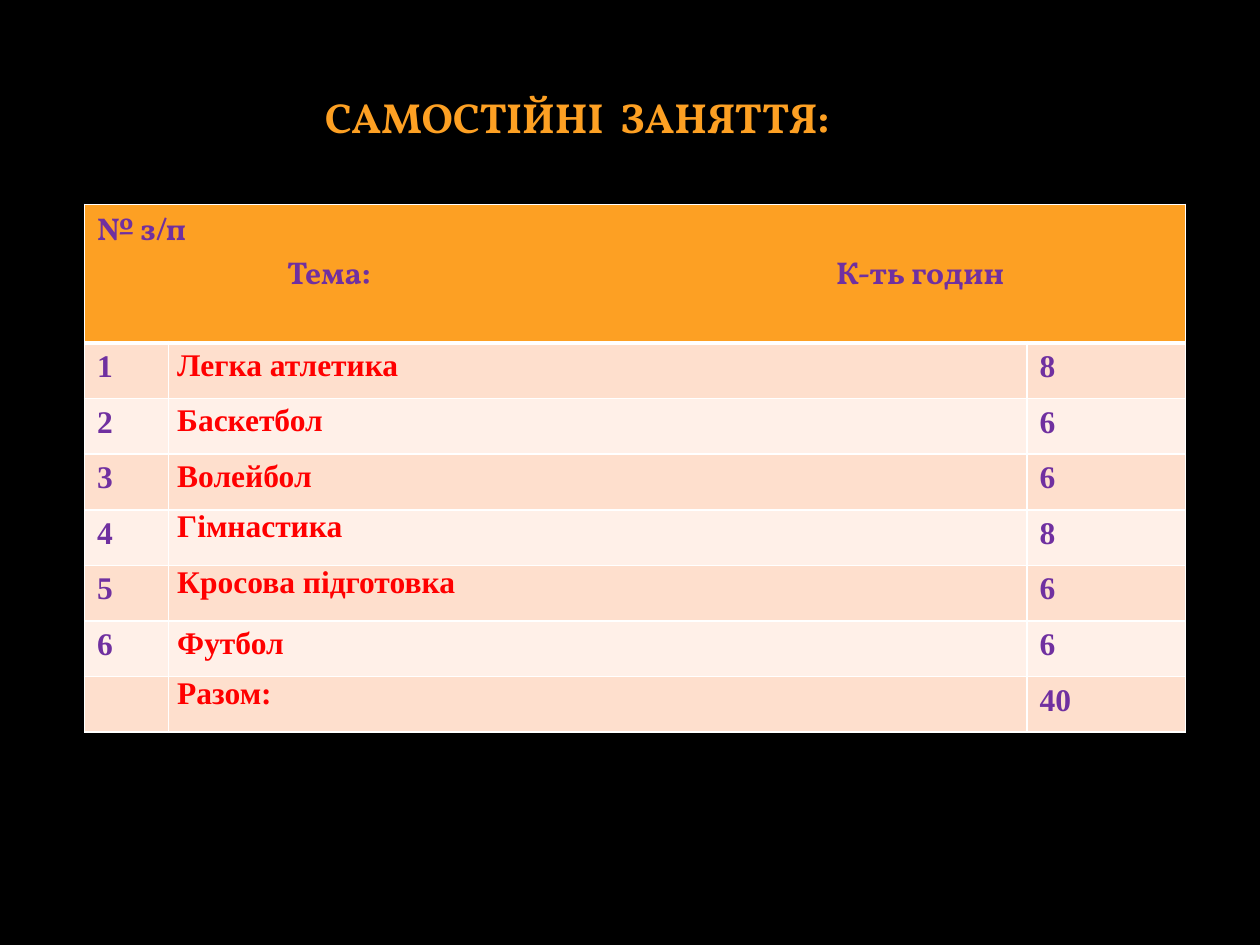
from lxml import etree
from pptx import Presentation
from pptx.dml.color import RGBColor
from pptx.oxml import ns
from pptx.util import Pt

ORANGE, PURPLE, RED, WHITE = "FDA023", "7030A0", "FF0000", "FFFFFF"
BANDS = ["FEDFCD", "FFF0E8"]
SERIF, DISPLAY = "Times New Roman", "Vollkorn"
ROWS = [
    ("1", "Легка атлетика", "8", 1.15),
    ("2", "Баскетбол", "6", 1.15),
    ("3", "Волейбол", "6", 1.15),
    ("4", "Гімнастика", "8", 1),
    ("5", "Кросова підготовка", "6", 1),
    ("6", "Футбол", "6", 1.15),
    ("", "Разом:", "40", 1),
]


def rgb(value):
    return RGBColor.from_string(value)


def write(p, content, color, font, size=18):
    r = p.add_run()
    r.text = content
    r.font.color.rgb = rgb(color)
    for name, value in {"name": font, "size": Pt(size), "bold": True}.items():
        setattr(r.font, name, value)


prs = Presentation()
prs.slide_width, prs.slide_height = Pt(720), Pt(540)
s = prs.slides.add_slide(prs.slide_layouts[6])
s.background.fill.solid()
s.background.fill.fore_color.rgb = rgb("000000")

# Title
tf = s.shapes.add_textbox(Pt(178.6), Pt(49), Pt(340), Pt(36)).text_frame
tf.word_wrap = True
write(tf.paragraphs[0], "САМОСТІЙНІ  ЗАНЯТТЯ:", ORANGE, DISPLAY, 24)

# Table grid
widths = [48, 490.6, 90.6]
heights = [79.2] + [31.8] * len(ROWS)
table = s.shapes.add_table(len(heights), len(widths), Pt(48.3), Pt(116.8),
                           Pt(sum(widths)), Pt(sum(heights))).table
for col, width in zip(table.columns, widths):
    col.width = Pt(width)
for row, height in zip(table.rows, heights):
    row.height = Pt(height)

# Borders and fills
for i, row in enumerate(table.rows):
    for cell in row.cells:
        tcPr = cell._tc.get_or_add_tcPr()
        for side in ("lnL", "lnR", "lnT", "lnB"):
            thick = (i, side) in ((0, "lnB"), (1, "lnT"))
            ln = etree.SubElement(tcPr, ns.qn("a:" + side), w=str(Pt(3 if thick else 1)))
            line_fill = etree.SubElement(ln, ns.qn("a:solidFill"))
            etree.SubElement(line_fill, ns.qn("a:srgbClr"), val=WHITE)
        cell.fill.solid()
        cell.fill.fore_color.rgb = rgb(BANDS[(i - 1) % 2] if i else ORANGE)

# Header
header = table.cell(0, 0)
header.merge(table.cell(0, 2))
tf = header.text_frame
write(tf.paragraphs[0], "№ з/п", PURPLE, DISPLAY)
p = tf.add_paragraph()
write(p, "\tТема:\tК-ть годин", PURPLE, DISPLAY)
tabs = etree.SubElement(p._p.get_or_add_pPr(), ns.qn("a:tabLst"))
for position in (108.6, 422.3):
    etree.SubElement(tabs, ns.qn("a:tab"), pos=str(Pt(position)), algn="l")

# Topics and hours
for i, (number, topic, hours, spacing) in enumerate(ROWS, 1):
    for j, content in enumerate((number, topic, hours)):
        cell = table.cell(i, j)
        p = cell.text_frame.paragraphs[0]
        if content:
            write(p, content, RED if j == 1 else PURPLE, SERIF)
        if j == 1:
            p.line_spacing = spacing
            margins = {"margin_left": 5, "margin_right": 5, "margin_top": 0, "margin_bottom": 0}
            for name, value in margins.items():
                setattr(cell, name, Pt(value))

prs.save("out.pptx")
